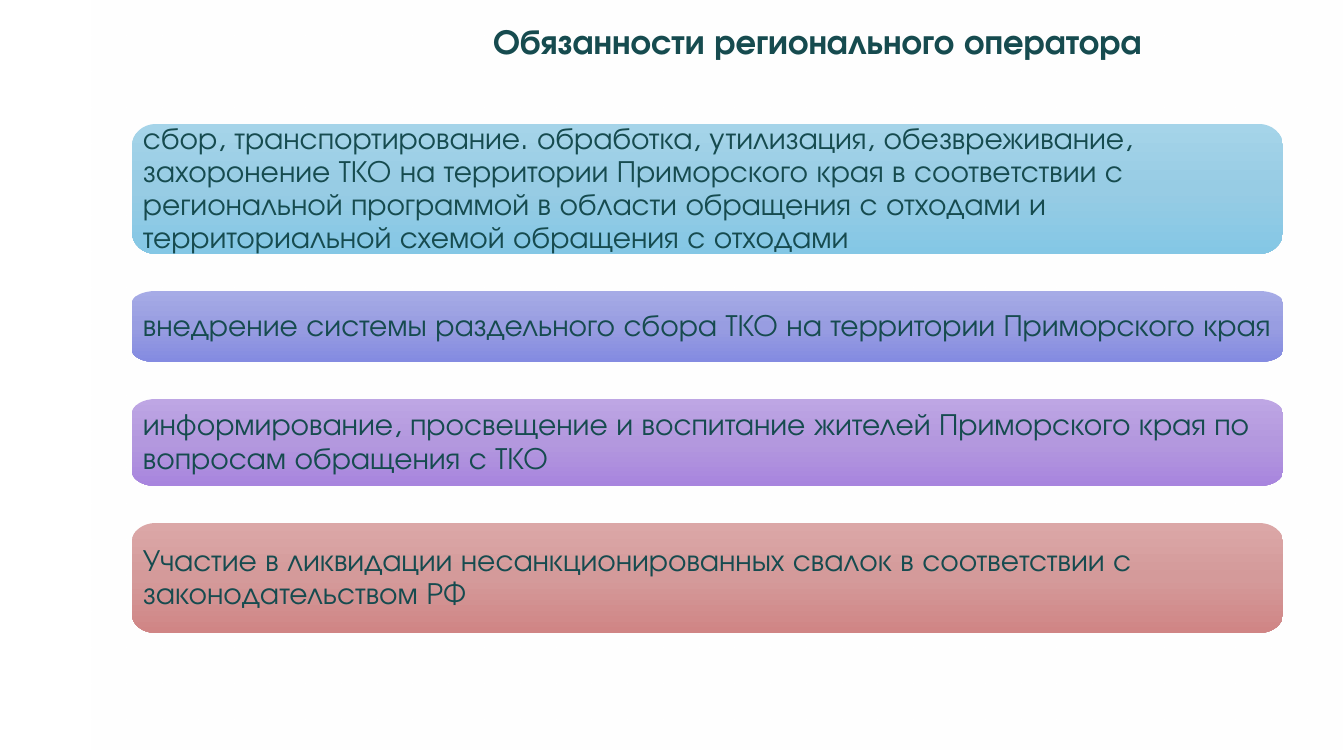
from dataclasses import dataclass

from lxml.etree import SubElement
from pptx import Presentation
from pptx.dml.color import RGBColor
from pptx.enum.shapes import MSO_SHAPE
from pptx.enum.text import MSO_ANCHOR, MSO_AUTO_SIZE, PP_ALIGN
from pptx.oxml.ns import qn
from pptx.util import Pt

PX = 9071
LEFT, TOP, WIDTH, GAP = 132, 124, 1151, 37
CORNER_WIDTH = 24
CURVE = 0.55


@dataclass(frozen=True)
class Theme:
    """Colours, font and type sizes of the slide."""

    font: str = "TeX Gyre Adventor"
    ink: str = "164B4F"
    title_size: int = 25
    duty_size: int = 22
    panel: tuple = (("FFFFFF", 60), ("FFFFFF", 0))
    blue: tuple = (("A5D4E9", 100), ("97CCE4", 100), ("84C7E5", 100))
    indigo: tuple = (("A6ABE6", 100), ("989DE1", 100), ("848BE1", 100))
    violet: tuple = (("BEA6E4", 100), ("B398DE", 100), ("A885DE", 100))
    rose: tuple = (("DBA7A7", 100), ("D49A9A", 100), ("D08585", 100))


THEME = Theme()
DUTIES = (
    (130, THEME.blue, "сбор, транспортирование. обработка, утилизация, обезвреживание, "
     "захоронение ТКО на территории Приморского края в соответствии с региональной "
     "программой в области обращения с отходами и территориальной схемой обращения с отходами"),
    (71, THEME.indigo, "внедрение системы раздельного сбора ТКО на территории Приморского края"),
    (87, THEME.violet, "информирование, просвещение и воспитание жителей Приморского края "
     "по вопросам обращения с ТКО"),
    (110, THEME.rose, "Участие в ликвидации несанкционированных свалок в соответствии "
     "с законодательством РФ"),
)


def apply_format(target, values):
    """Set each named attribute on the target."""
    for name, value in values.items():
        setattr(target, name, value)


def paint(shape, stops):
    """Fill a shape from top to bottom with evenly spaced colour and opacity stops."""
    shape.shadow.inherit = False
    shape.line.fill.background()
    shape.fill.gradient()
    shape.fill.gradient_angle = 270
    stop_list = shape._element.spPr.find(qn("a:gradFill")).find(qn("a:gsLst"))
    stop_list.clear()
    for index, (colour, opacity) in enumerate(stops):
        position = 100000 * index // (len(stops) - 1)
        stop = SubElement(stop_list, qn("a:gs"), pos=str(position))
        rgb = SubElement(stop, qn("a:srgbClr"), val=colour)
        if opacity < 100:
            SubElement(rgb, qn("a:alpha"), val=str(opacity * 1000))


def write(shape, text, size, bold, align, anchor, margins):
    """Put one formatted paragraph into a shape."""
    frame = shape.text_frame
    sides = ("left", "top", "right", "bottom")
    insets = {f"margin_{side}": margin * PX for side, margin in zip(sides, margins)}
    apply_format(frame, {"text": text, "word_wrap": True, "vertical_anchor": anchor,
                         "auto_size": MSO_AUTO_SIZE.NONE, **insets})
    paragraph = frame.paragraphs[0]
    apply_format(paragraph, {"alignment": align, "line_spacing": 0.9})
    font = paragraph.runs[0].font
    apply_format(font, {"name": THEME.font, "size": Pt(size), "bold": bold})
    font.color.rgb = RGBColor.from_string(THEME.ink)


def round_corners(bar, corners):
    """Turn the cut corners of a bar into quarter ellipses."""
    outline = next(bar._element.iter(qn("a:path")))
    points = [(int(point.get("x")), int(point.get("y"))) for point in outline.iter(qn("a:pt"))]
    cuts = outline.findall(qn("a:lnTo"))[::2]
    for cut, corner, begin, end in zip(cuts, corners, points[::2], points[1::2]):
        curve = SubElement(outline, qn("a:cubicBezTo"))
        controls = [
            [round(edge + (tip - edge) * CURVE) for edge, tip in zip(point, corner)]
            for point in (begin, end)
        ]
        for x, y in (*controls, end):
            SubElement(curve, qn("a:pt"), x=str(x), y=str(y))
        outline.replace(cut, curve)


def add_bar(slide, top, height):
    """Build a bar with elliptic corners."""
    right, bottom = LEFT + WIDTH, top + height
    near, far = LEFT + CORNER_WIDTH, right - CORNER_WIDTH
    upper, lower = top + height / 6, bottom - height / 6
    start, *rest = (
        (round(x * PX), round(y * PX))
        for x, y in ((LEFT, upper), (near, top), (far, top), (right, upper),
                     (right, lower), (far, bottom), (near, bottom), (LEFT, lower))
    )
    builder = slide.shapes.build_freeform(*start)
    builder.add_line_segments(rest, close=True)
    bar = builder.convert_to_shape()
    round_corners(bar, ((0, 0), (bar.width, 0), (bar.width, bar.height), (0, bar.height)))
    return bar


def add_duty(slide, top, height, stops, text):
    """Draw one duty of the operator on its bar."""
    duty = add_bar(slide, top, height)
    paint(duty, stops)
    write(duty, text, THEME.duty_size, False, PP_ALIGN.LEFT, MSO_ANCHOR.MIDDLE, (11, 10, 10, 10))


def add_heading(slide, text):
    """Place and format the slide title."""
    heading = slide.shapes.title
    apply_format(heading, {"left": 245 * PX, "top": 5 * PX, "width": 907 * PX, "height": 62 * PX})
    write(heading, text, THEME.title_size, True, PP_ALIGN.RIGHT, MSO_ANCHOR.BOTTOM, (10, 5, 10, 5))


def add_panel(deck, slide):
    """Lay the pale panel at the back of the slide master."""
    panel = slide.shapes.add_shape(MSO_SHAPE.RECTANGLE, 92 * PX, 0, 1251 * PX, 756 * PX)
    paint(panel, THEME.panel)
    deck.slide_master.placeholders[0]._element.addprevious(panel._element)


def main():
    """Build and save the slide."""
    deck = Presentation()
    apply_format(deck, {"slide_width": 1344 * PX, "slide_height": 756 * PX})
    slide = deck.slides.add_slide(deck.slide_layouts.get_by_name("Title Only"))
    add_panel(deck, slide)
    add_heading(slide, "Обязанности регионального оператора")
    top = TOP
    for height, stops, text in DUTIES:
        add_duty(slide, top, height, stops, text)
        top += height + GAP
    deck.save("out.pptx")


if __name__ == "__main__":
    main()
